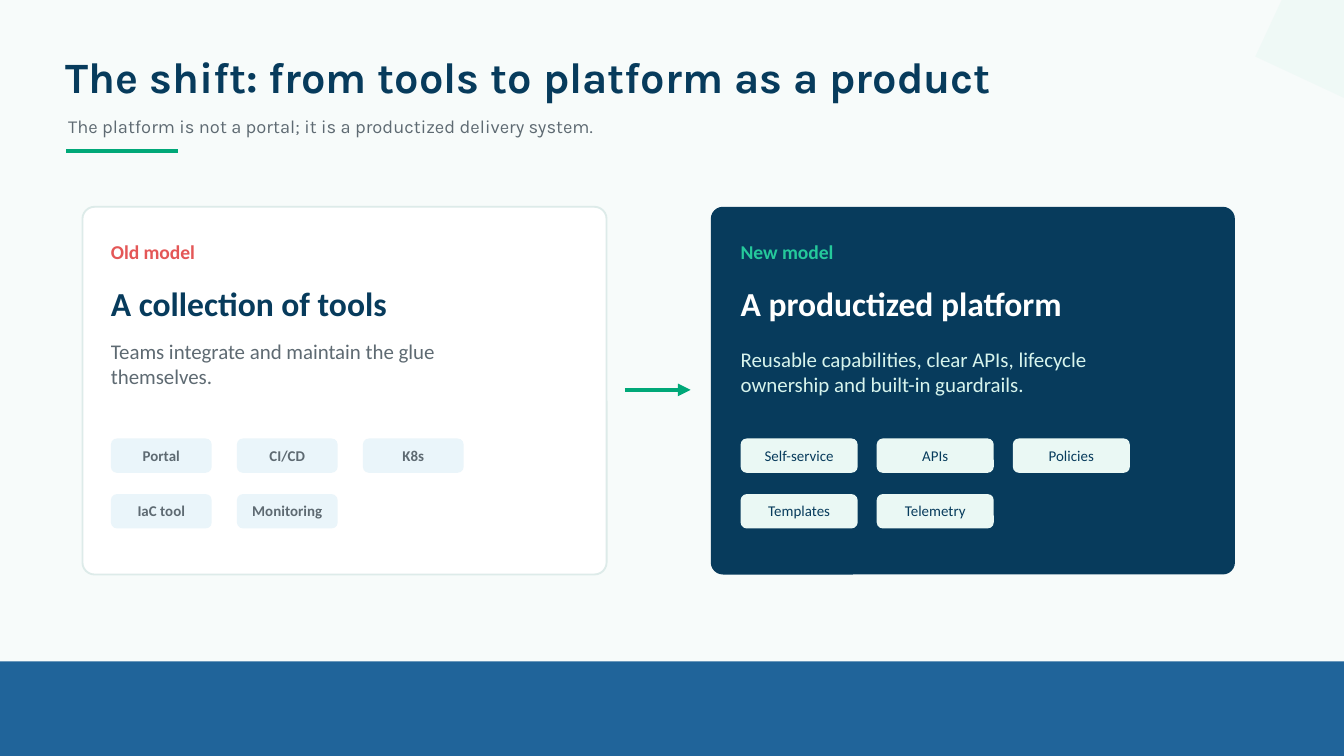
from lxml.etree import SubElement as Sub
from pptx import Presentation
from pptx.dml.color import RGBColor
from pptx.enum.shapes import MSO_CONNECTOR as Conn, MSO_SHAPE as Kind
from pptx.enum.text import MSO_ANCHOR as Anchor, PP_ALIGN as Align
from pptx.oxml.ns import qn
from pptx.util import Pt

NAVY, GREEN, GRAY, MINT = "073B5C", "00A878", "5E6A72", "EAF8F4"


def paint(spot, hue):
    """Set a fill or a font colour from a hex string."""
    if hasattr(spot, "solid"):
        spot.solid()
        spot.fore_color.rgb = RGBColor.from_string(hue)
    else:
        spot.color.rgb = RGBColor.from_string(hue)


def add_text(slide, text, x, y, w, h, size=8, hue=GRAY, face="Calibri",
             bold=False, align=Align.LEFT):
    """Add a text box with one run in one format."""
    frame = slide.shapes.add_textbox(Pt(x), Pt(y), Pt(w), Pt(h)).text_frame
    frame.word_wrap = True
    frame.vertical_anchor = Anchor.MIDDLE
    frame.margin_left = frame.margin_right = 0
    frame.margin_top = frame.margin_bottom = 0
    para = frame.paragraphs[0]
    para.alignment = align
    run = para.add_run()
    run.text = text
    run.font.name, run.font.size, run.font.bold = face, Pt(size), bold
    paint(run.font, hue)


def add_box(slide, kind, x, y, w, h, fill, edge=None, round_by=None):
    """Add a filled preset shape with an optional thin edge."""
    box = slide.shapes.add_shape(kind, Pt(x), Pt(y), Pt(w), Pt(h))
    box.shadow.inherit = False
    paint(box.fill, fill)
    if edge:
        paint(box.line.fill, edge)
        box.line.width = Pt(1)
    else:
        box.line.fill.background()
    if round_by is not None:
        box.adjustments[0] = round_by
    return box


def add_line(slide, x, y, end, width, arrow=False):
    """Add a level green line, with an arrowhead if asked."""
    line = slide.shapes.add_connector(Conn.STRAIGHT, Pt(x), Pt(y), Pt(end), Pt(y))
    paint(line.line.fill, GREEN)
    line.line.width = Pt(width)
    if arrow:
        Sub(line.line._get_or_add_ln(), qn("a:tailEnd"), type="triangle")
    Sub(line._element.spPr, qn("a:effectLst"))


def add_arc(slide):
    """Add the pale, tilted corner arc."""
    arc = add_box(slide, Kind.ARC, 583.2, -59, 178.6, 178.6, MINT)
    arc.rotation = 25
    tint = arc._element.spPr.find(f"{qn('a:solidFill')}/{qn('a:srgbClr')}")
    Sub(tint, qn("a:alpha"), val="60000")


def add_chips(slide, names, x, w, step, fill, hue, bold):
    """Lay out the chips in rows of three."""
    for i, name in enumerate(names):
        row, col = divmod(i, 3)
        left, top = x + col * step, 234.9 + row * 29.8
        add_box(slide, Kind.ROUNDED_RECTANGLE, left, top, w, 18.4, fill, round_by=0.176)
        add_text(slide, name, left + 4.4, top + 4.6, w - 8.8, 8.8,
                 hue=hue, bold=bold, align=Align.CENTER)


def add_card(slide, x, fill, edge, tag, head, body, body_h, inset, hues):
    """Add a model card and return the left edge of its content."""
    add_box(slide, Kind.ROUNDED_RECTANGLE, x, 110.8, 280.8, 197, fill, edge, 0.033)
    left = x + inset
    add_text(slide, tag, left, 128.4, 81, 13, size=10.5, hue=hues[0], bold=True)
    add_text(slide, head, left, 152.6, 208, 19.4, size=18, hue=hues[1], bold=True)
    add_text(slide, body, left, 180.7, 212, body_h, size=11.2, hue=hues[2])
    return left


def main():
    """Build and save the slide."""
    deck = Presentation()
    deck.slide_width, deck.slide_height = Pt(720), Pt(405)
    slide = deck.slides.add_slide(deck.slide_layouts[6])
    paint(slide.background.fill, "F7FBFA")
    add_box(slide, Kind.RECTANGLE, 0, 354.4, 720, 50.6, "20649A")
    add_arc(slide)

    add_text(slide, "The shift: from tools to platform as a product",
             35.2, 26, 578, 29.5, size=23.2, hue=NAVY, face="Karla", bold=True)
    add_text(slide, "The platform is not a portal; it is a productized delivery system.",
             36.5, 59.2, 540, 17.3, size=9.8, face="Karla")
    add_line(slide, 35.6, 80.9, 95.2, 2)

    left = add_card(slide, 44.2, "FFFFFF", "DDEBE9", "Old model", "A collection of tools",
                    "Teams integrate and maintain the glue themselves.", 28, 15.2,
                    ("E45757", NAVY, GRAY))
    add_chips(slide, ("Portal", "CI/CD", "K8s", "IaC tool", "Monitoring"),
              left, 54, 67.5, "EAF5FA", GRAY, True)

    left = add_card(slide, 380.8, NAVY, None, "New model", "A productized platform",
                    "Reusable capabilities, clear APIs, lifecycle ownership "
                    "and built-in guardrails.", 36.7, 16,
                    ("25C99B", "FFFFFF", "D7F4ED"))
    add_chips(slide, ("Self-service", "APIs", "Policies", "Templates", "Telemetry"),
              left, 62.7, 72.9, MINT, NAVY, False)

    add_line(slide, 334.8, 208.9, 370, 2.3, arrow=True)
    deck.save("out.pptx")


if __name__ == "__main__":
    main()
